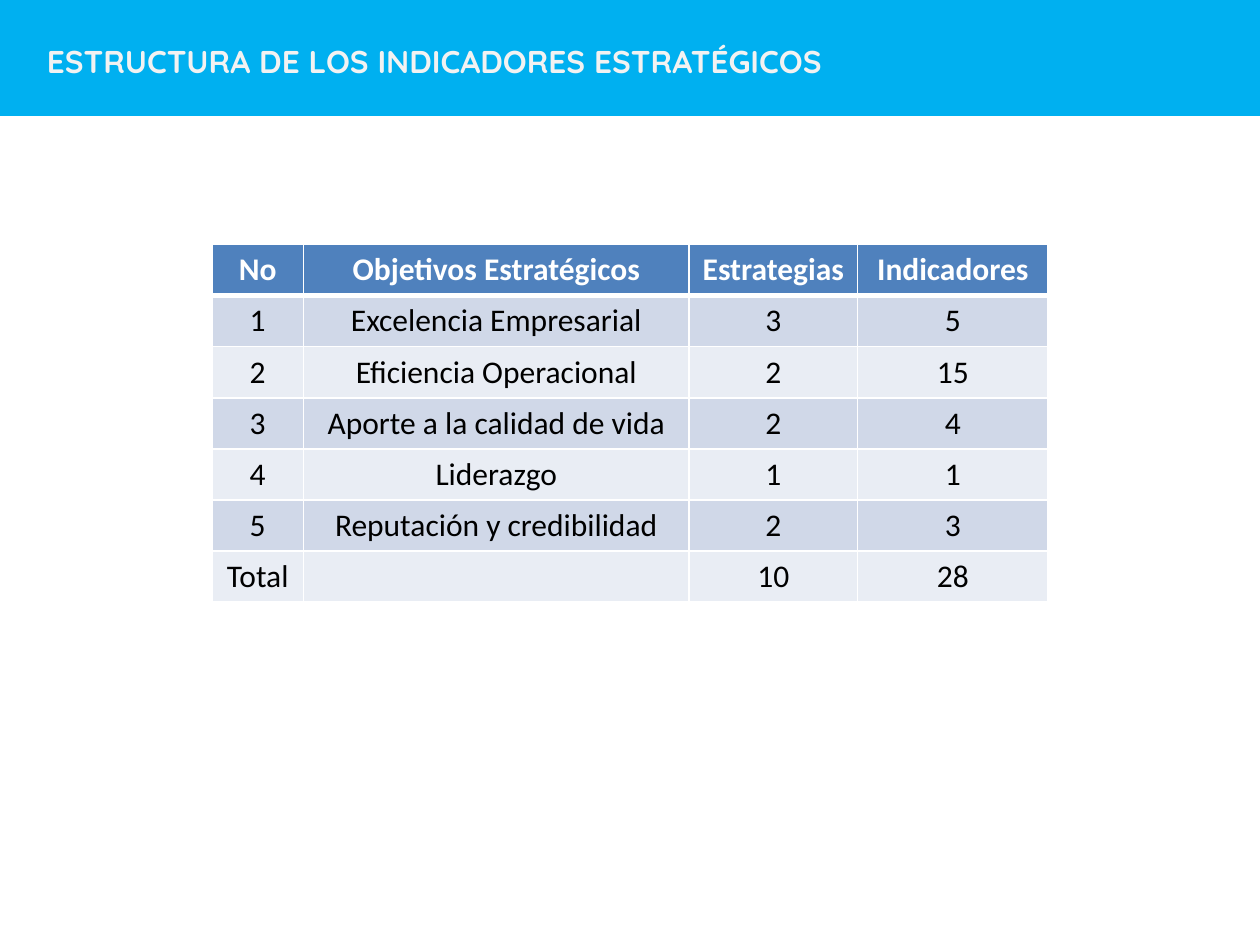
from lxml import etree
from pptx import Presentation
from pptx.dml.color import RGBColor
from pptx.enum.shapes import MSO_SHAPE
from pptx.enum.text import MSO_ANCHOR, MSO_AUTO_SIZE, PP_ALIGN
from pptx.oxml.ns import qn
from pptx.util import Cm, Pt

RECTANGLE = MSO_SHAPE.RECTANGLE
LEFT, CENTER = PP_ALIGN.LEFT, PP_ALIGN.CENTER
TOP = MSO_ANCHOR.TOP
FIT_SHAPE = MSO_AUTO_SIZE.SHAPE_TO_FIT_TEXT
TITLE_ONLY = 5

COLORS = {
    "band": "00B0F0",
    "title": "F2F2F2",
    "header": "4F81BD",
    "odd_row": "D0D8E8",
    "even_row": "E9EDF4",
    "white": "FFFFFF",
    "black": "000000",
}

OBJECTIVES = [
    ("No", "Objetivos Estratégicos", "Estrategias", "Indicadores"),
    ("1", "Excelencia Empresarial", "3", "5"),
    ("2", "Eficiencia Operacional", "2", "15"),
    ("3", "Aporte a la calidad de vida", "2", "4"),
    ("4", "Liderazgo", "1", "1"),
    ("5", "Reputación y credibilidad", "2", "3"),
    ("Total", "", "10", "28"),
]
COLUMN_WIDTHS = (1.85, 7.77, 3.4, 3.84)
ROW_HEIGHT = 1.03


def rgb(name):
    return RGBColor.from_string(COLORS[name])


def style_font(font, name, color, bold):
    font.name = name
    font.size = Pt(18)
    font.bold = bold
    font.color.rgb = rgb(color)


def set_borders(cell, top, bottom):
    """Give the cell white borders; widths are in points."""
    properties = cell._tc.get_or_add_tcPr()
    sides = (("a:lnL", 1), ("a:lnR", 1), ("a:lnT", top), ("a:lnB", bottom))
    for position, (tag, width) in enumerate(sides):
        line = etree.Element(qn(tag), w=str(Pt(width)))
        fill = etree.SubElement(line, qn("a:solidFill"))
        etree.SubElement(fill, qn("a:srgbClr"), val=COLORS["white"])
        properties.insert(position, line)


def add_heading(slide, left, top, width, height):
    # Colour band, sent behind the title
    band = slide.shapes.add_shape(RECTANGLE, left, top, width, height)
    band.shadow.inherit = False
    band.fill.solid()
    band.fill.fore_color.rgb = rgb("band")
    band.line.color.rgb = rgb("band")
    band.line.width = Pt(2)
    slide.shapes._spTree.insert(2, band._element)

    # Title
    title = slide.shapes.title
    title.left, title.top = left + Cm(0.69), top + Cm(0.79)
    title.width, title.height = Cm(16.59), Cm(1.02)
    frame = title.text_frame
    frame.text = "ESTRUCTURA DE LOS INDICADORES ESTRATÉGICOS"
    frame.word_wrap = True
    frame.auto_size = FIT_SHAPE
    frame.vertical_anchor = TOP
    paragraph = frame.paragraphs[0]
    paragraph.alignment = LEFT
    style_font(paragraph.runs[0].font, "Quicksand", "title", True)


def add_objectives_table(slide, left, top):
    width, height = Cm(sum(COLUMN_WIDTHS)), Cm(ROW_HEIGHT * len(OBJECTIVES))
    table = slide.shapes.add_table(
        len(OBJECTIVES), len(COLUMN_WIDTHS), left, top, width, height
    ).table
    for column, column_width in zip(table.columns, COLUMN_WIDTHS):
        column.width = Cm(column_width)

    for row_number, values in enumerate(OBJECTIVES):
        row = table.rows[row_number]
        row.height = Cm(ROW_HEIGHT)
        is_header = row_number == 0
        stripe = "odd_row" if row_number % 2 else "even_row"
        for cell, value in zip(row.cells, values):
            cell.fill.solid()
            cell.fill.fore_color.rgb = rgb("header" if is_header else stripe)
            # A thick rule separates the header from the body
            set_borders(cell, top=3 if row_number == 1 else 1,
                        bottom=3 if is_header else 1)
            cell.text_frame.text = value
            paragraph = cell.text_frame.paragraphs[0]
            paragraph.alignment = CENTER
            for run in paragraph.runs:
                style_font(run.font, "Calibri",
                           "white" if is_header else "black", is_header)


def main():
    presentation = Presentation()
    presentation.slide_width, presentation.slide_height = Cm(25.4), Cm(19.05)
    slide = presentation.slides.add_slide(presentation.slide_layouts[TITLE_ONLY])
    add_heading(slide, Cm(0), Cm(-0.08), presentation.slide_width, Cm(2.39))
    add_objectives_table(slide, Cm(4.27), Cm(4.93))
    presentation.save("out.pptx")


if __name__ == "__main__":
    main()
